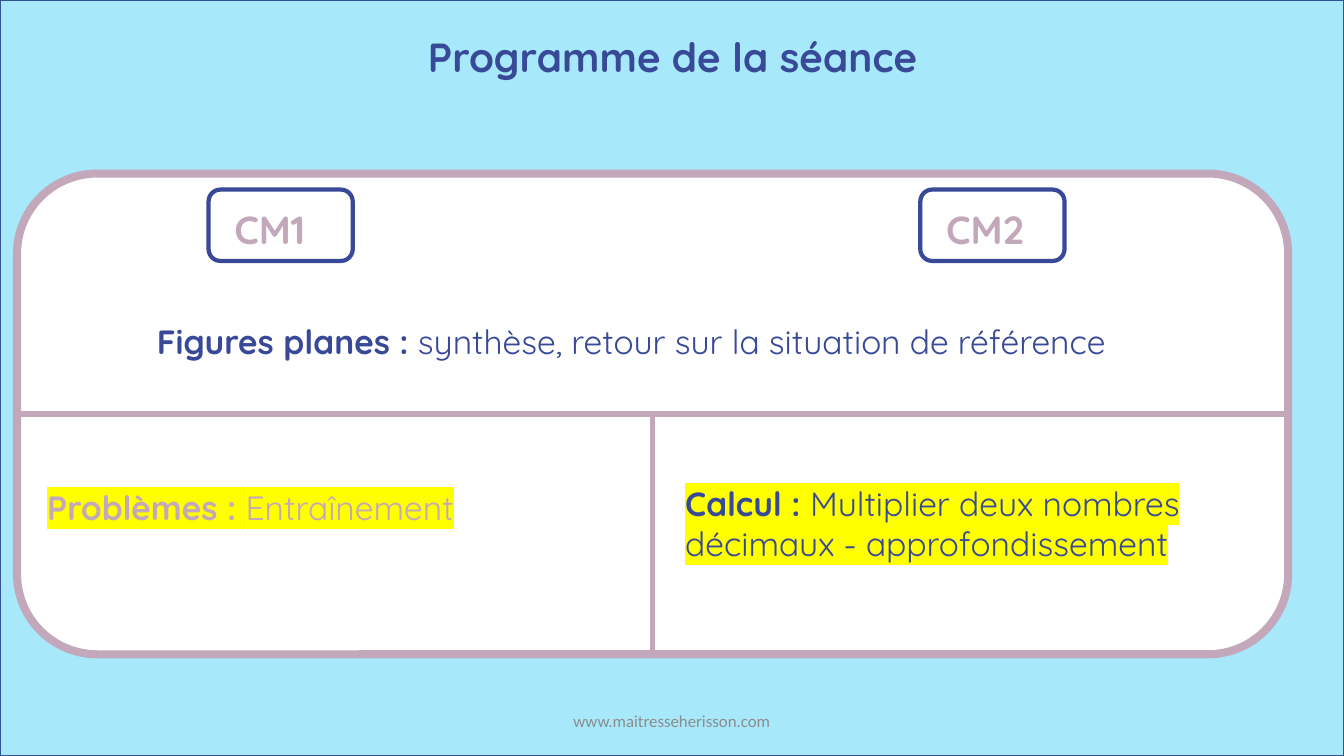
from dataclasses import dataclass

import pptx
import pptx.dml.color
import pptx.enum.shapes
import pptx.enum.text
import pptx.oxml
import pptx.oxml.ns
import pptx.util

Pt = pptx.util.Pt
RGBColor = pptx.dml.color.RGBColor
SHAPE = pptx.enum.shapes.MSO_SHAPE
ALIGN = pptx.enum.text.PP_ALIGN
ANCHOR = pptx.enum.text.MSO_ANCHOR
qn = pptx.oxml.ns.qn

SKY = RGBColor(0xA7, 0xE8, 0xFB)
EDGE = RGBColor(0x32, 0x54, 0x91)
NAVY = RGBColor(0x37, 0x49, 0x97)
MAUVE = RGBColor(0xC3, 0xA7, 0xBA)
GREY = RGBColor(0x8C, 0x8C, 0x8C)
WHITE = RGBColor(0xFF, 0xFF, 0xFF)
YELLOW = RGBColor(0xFF, 0xFF, 0x00)


@dataclass
class Box:
    left: float
    top: float
    width: float
    height: float

    def lengths(self) -> tuple:
        return Pt(self.left), Pt(self.top), Pt(self.width), Pt(self.height)


@dataclass
class Label:
    box: Box
    color: RGBColor
    size: float
    heading: str = ""
    detail: str = ""
    font: str = "Quicksand"
    align: ALIGN = ALIGN.LEFT
    anchor: ANCHOR = ANCHOR.TOP
    highlight: RGBColor | None = None


def add_panel(slide, kind: SHAPE, box: Box, fill: RGBColor, line: RGBColor, weight: float):
    panel = slide.shapes.add_shape(kind, *box.lengths())
    panel.shadow.inherit = False
    panel.fill.solid()
    panel.fill.fore_color.rgb = fill
    panel.line.color.rgb = line
    panel.line.width = Pt(weight)
    return panel


def highlight_run(run, color: RGBColor) -> None:
    properties = run.font._element
    mark = pptx.oxml.parse_xml(
        '<a:highlight xmlns:a="http://schemas.openxmlformats.org/drawingml/2006/main">'
        f'<a:srgbClr val="{color}"/></a:highlight>')
    properties.find(qn("a:solidFill")).addnext(mark)


def write_text(frame, label: Label) -> None:
    frame.word_wrap = True
    frame.vertical_anchor = label.anchor
    paragraph = frame.paragraphs[0]
    paragraph.alignment = label.align
    for words, bold in ((label.heading, True), (label.detail, False)):
        if not words:
            continue
        run = paragraph.add_run()
        run.text = words
        run.font.color.rgb = label.color
        formats = {"name": label.font, "size": Pt(label.size), "bold": bold}
        for attribute, value in formats.items():
            setattr(run.font, attribute, value)
        if label.highlight is not None:
            highlight_run(run, label.highlight)


def add_label(slide, label: Label) -> None:
    write_text(slide.shapes.add_textbox(*label.box.lengths()).text_frame, label)


def add_badge(slide, label: Label) -> None:
    badge = add_panel(slide, SHAPE.ROUNDED_RECTANGLE, label.box, WHITE, NAVY, 3)
    margins = {"margin_left": 16, "margin_top": 9, "margin_right": 0, "margin_bottom": 0}
    for attribute, points in margins.items():
        setattr(badge.text_frame, attribute, Pt(points))
    write_text(badge.text_frame, label)


def add_divider(slide, x1: float, y1: float, x2: float, y2: float):
    divider = slide.shapes.add_connector(
        pptx.enum.shapes.MSO_CONNECTOR.STRAIGHT, Pt(x1), Pt(y1), Pt(x2), Pt(y2))
    divider.line.color.rgb = MAUVE
    divider.line.width = Pt(4)
    divider._element.spPr.append(pptx.oxml.parse_xml(
        '<a:effectLst xmlns:a="http://schemas.openxmlformats.org/drawingml/2006/main"/>'))
    return divider


PAGE = Box(0, 0, 960, 540)
CARD = Box(12.2, 124, 908, 343.4)
MIDDLE_X = CARD.left + CARD.width / 2
MIDDLE_Y = CARD.top + CARD.height / 2
BOTTOM = CARD.top + CARD.height

BADGES = [Label(Box(left, 135.4, 103, 51), MAUVE, 28, level)
          for level, left in (("CM1", 149), ("CM2", 657.4))]

LABELS = [
    Label(Box(0.5, 19.4, 960, 42.5), NAVY, 29, "Programme de la séance", align=ALIGN.CENTER),
    Label(Box(105, 226, 714, 36), NAVY, 24, "Figures planes : ",
          "synthèse, retour sur la situation de référence"),
    Label(Box(26.6, 344, 435, 36), MAUVE, 24, "Problèmes : ", "Entraînement",
          highlight=YELLOW),
    Label(Box(482.4, 341.3, 413, 65.5), NAVY, 24, "Calcul : ",
          "Multiplier deux nombres décimaux - approfondissement", highlight=YELLOW),
    Label(Box(318, 500.4, 324, 28.8), GREY, 12, detail="www.maitresseherisson.com",
          font="Calibri", align=ALIGN.CENTER, anchor=ANCHOR.MIDDLE),
]


def main() -> None:
    deck = pptx.Presentation()
    deck.slide_width, deck.slide_height = Pt(PAGE.width), Pt(PAGE.height)
    slide = deck.slides.add_slide(deck.slide_layouts[6])

    # Background and programme card
    add_panel(slide, SHAPE.RECTANGLE, PAGE, SKY, EDGE, 1)
    card = add_panel(slide, SHAPE.ROUNDED_RECTANGLE, CARD, WHITE, MAUVE, 5.75)

    # Class levels
    for badge in BADGES:
        add_badge(slide, badge)

    # Dividers between the shared part and the two levels
    levels_divider = add_divider(slide, MIDDLE_X, MIDDLE_Y - 2, MIDDLE_X, BOTTOM)
    levels_divider.end_connect(card, 2)
    shared_divider = add_divider(slide, CARD.left, MIDDLE_Y, CARD.left + CARD.width, MIDDLE_Y)
    shared_divider.begin_connect(card, 1)
    shared_divider.end_connect(card, 3)

    # Title, activities and footer
    for label in LABELS:
        add_label(slide, label)

    deck.save("out.pptx")


if __name__ == "__main__":
    main()
